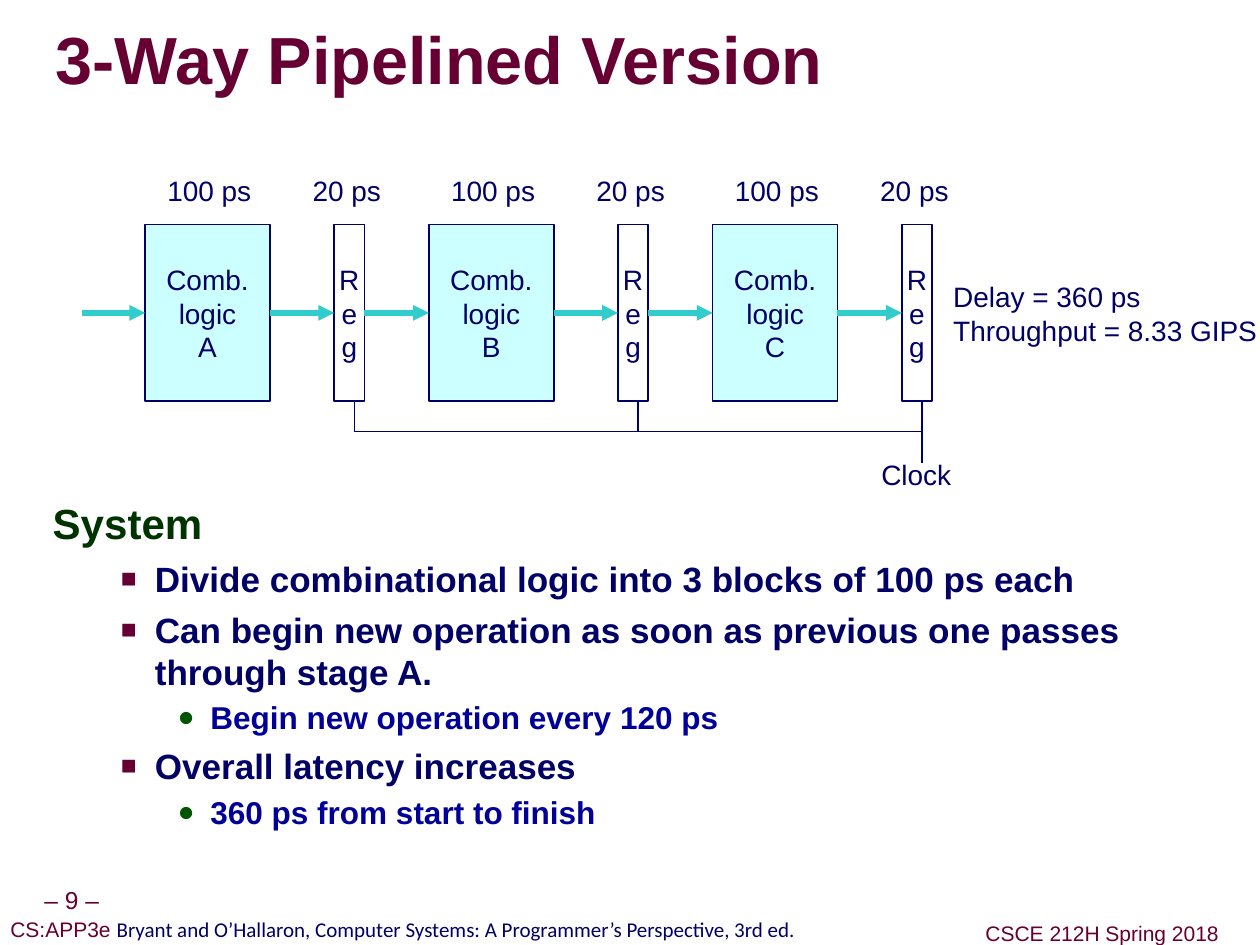
from lxml.etree import SubElement
from pptx import Presentation
from pptx.dml.color import RGBColor
from pptx.enum.shapes import MSO_CONNECTOR, MSO_SHAPE
from pptx.enum.text import MSO_ANCHOR, MSO_AUTO_SIZE, PP_ALIGN
from pptx.oxml.ns import qn
from pptx.util import Inches, Pt

NAVY, MAROON, TEAL = "000066", "660033", "33CCCC"
PALE, WHITE = "CCFFFF", "FFFFFF"
TOP, HEIGHT, LOGIC_WIDTH, REG_WIDTH = 1.78, 1.4, 0.99, 0.24
STAGE_PITCH, REG_OFFSET, CLOCK_Y = 2.25, 1.5, 3.42
FLOW_Y = TOP + HEIGHT / 2

BULLETS = {
    1: dict(mark="■", mark_color=MAROON, mark_size=75, margin=0.81, indent=-0.27,
            before=5, spacing=1.0, size=20, color=NAVY),
    2: dict(mark="●", mark_color="005400", mark_size=90, margin=1.25, indent=-0.26,
            before=1.8, spacing=1.07, size=18, color="000099"),
}
POINTS = [
    (1, "Divide combinational logic into 3 blocks of 100 ps each"),
    (1, "Can begin new operation as soon as previous one passes through stage A."),
    (2, "Begin new operation every 120 ps"),
    (1, "Overall latency increases"),
    (2, "360 ps from start to finish"),
]


def rgb(value):
    """Turn a hex string into a colour."""
    return RGBColor.from_string(value)


def add_span(para, text, size=16, color=NAVY, bold=False, font="Arial"):
    """Add formatted text to a paragraph."""
    span = para.add_run()
    span.text = text
    span.font.size = Pt(size)
    span.font.color.rgb = rgb(color)
    span.font.bold = bold
    span.font.name = font
    return span


class SlideBuilder:
    """Hold the style and the current page."""

    def __init__(self, deck):
        """Add a title-only page."""
        self.page = deck.slides.add_slide(deck.slide_layouts[5])

    def frame(self, shape, inset=(0.1, 0.05), wrap=False, anchor=MSO_ANCHOR.TOP):
        """Set the text frame of a shape."""
        frame = shape.text_frame
        frame.auto_size = MSO_AUTO_SIZE.NONE
        frame.word_wrap = wrap
        frame.vertical_anchor = anchor
        frame.margin_left = frame.margin_right = Inches(inset[0])
        frame.margin_top = frame.margin_bottom = Inches(inset[1])
        return frame

    def add_lines(self, frame, lines, align=PP_ALIGN.CENTER):
        """Add one paragraph per line."""
        for index, line in enumerate(lines):
            para = frame.add_paragraph() if index else frame.paragraphs[0]
            para.alignment = align
            add_span(para, line)

    def title(self, text):
        """Place the shadowed title."""
        title = self.page.shapes.title
        title.left, title.top = Inches(0.44), Inches(0.08)
        title.width, title.height = Inches(9.52), Inches(0.85)
        frame = self.frame(title, (0, 0), True, MSO_ANCHOR.MIDDLE)
        para = frame.paragraphs[0]
        para.alignment = PP_ALIGN.LEFT
        para.line_spacing = 0.87
        span = add_span(para, text, size=38, color=MAROON, bold=True)
        props = span._r.get_or_add_rPr()
        effects = SubElement(props, qn("a:effectLst"))
        shadow = SubElement(effects, qn("a:outerShdw"), dist="38100", dir="2700000")
        SubElement(shadow, qn("a:srgbClr"), val="999999")
        props.find(qn("a:solidFill")).addnext(effects)

    def text_box(self, left, top, width, height):
        """Add an empty text box."""
        return self.page.shapes.add_textbox(
            Inches(left), Inches(top), Inches(width), Inches(height))

    def label(self, lines, left, top, width, height=0.36, align=PP_ALIGN.CENTER):
        """Add a diagram label."""
        self.add_lines(self.frame(self.text_box(left, top, width, height)), lines, align)

    def footer(self, spans, left, top, width, height=0.28):
        """Add a footer line from formatted spans."""
        box = self.text_box(left, top, width, height)
        para = self.frame(box, (0.05, 0.05), anchor=MSO_ANCHOR.MIDDLE).paragraphs[0]
        para.alignment = PP_ALIGN.CENTER
        para.line_spacing = 0.9
        for text, style in spans:
            add_span(para, text, **style)

    def block(self, lines, left, width, fill):
        """Add an outlined pipeline block."""
        box = self.page.shapes.add_shape(
            MSO_SHAPE.RECTANGLE, Inches(left), Inches(TOP), Inches(width), Inches(HEIGHT))
        box.shadow.inherit = False
        box.fill.solid()
        box.fill.fore_color.rgb = rgb(fill)
        box.line.color.rgb = rgb(NAVY)
        box.line.width = Pt(1)
        self.add_lines(self.frame(box, anchor=MSO_ANCHOR.MIDDLE), lines)
        return box

    def line(self, start, end, color=NAVY, width=1):
        """Add a straight line."""
        line = self.page.shapes.add_connector(
            MSO_CONNECTOR.STRAIGHT, *(Inches(value) for value in (*start, *end)))
        line.line.color.rgb = rgb(color)
        line.line.width = Pt(width)
        SubElement(line._element.spPr, qn("a:effectLst"))
        return line

    def arrow(self, source, target):
        """Add a flow arrow into the left side of a block."""
        end_x = target.left.inches
        arrow = self.line((end_x - 0.5, FLOW_Y), (end_x, FLOW_Y), TEAL, 3)
        if source is not None:
            arrow.begin_connect(source, 3)
        arrow.end_connect(target, 1)
        outline = arrow._element.spPr.find(qn("a:ln"))
        SubElement(outline, qn("a:tailEnd"), type="triangle")

    def bullet(self, para, text, mark, mark_color, mark_size, margin, indent,
               before, spacing, **style):
        """Fill a paragraph with a bulleted line."""
        para.space_before = Pt(before)
        para.line_spacing = spacing
        props = para._p.get_or_add_pPr()
        props.set("marL", str(Inches(margin)))
        props.set("indent", str(Inches(indent)))
        SubElement(SubElement(props, qn("a:buClr")), qn("a:srgbClr"), val=mark_color)
        SubElement(props, qn("a:buSzPct"), val=str(mark_size * 1000))
        SubElement(props, qn("a:buFont"), typeface="Arial")
        SubElement(props, qn("a:buChar"), char=mark)
        add_span(para, text, bold=True, **style)

    def outline(self, heading, points):
        """Add the heading and its bullets."""
        frame = self.frame(self.text_box(0.32, 3.92, 9.07, 3.12), wrap=True)
        para = frame.paragraphs[0]
        para.line_spacing = 0.95
        add_span(para, heading, size=24, color="003300", bold=True)
        for level, text in points:
            para = frame.add_paragraph()
            para.level = level
            self.bullet(para, text, **BULLETS[level])

    def pipeline(self, stages):
        """Draw the stages, registers and clock lines."""
        previous = None
        clocks = []
        for index, stage in enumerate(stages):
            left = 1.15 + STAGE_PITCH * index
            logic = self.block(["Comb.", "logic", stage], left, LOGIC_WIDTH, PALE)
            register = self.block("Reg", left + REG_OFFSET, REG_WIDTH, WHITE)
            self.arrow(previous, logic)
            self.arrow(logic, register)
            self.label(["100 ps"], left + 0.08, 1.33, 0.86)
            self.label(["20 ps"], left + 1.23, 1.33, 0.74)
            clocks.append(left + 1.66)
            bottom = 3.67 if index == len(stages) - 1 else CLOCK_Y
            self.line((clocks[-1], TOP + HEIGHT), (clocks[-1], bottom))
            previous = register
        self.line((clocks[0], CLOCK_Y), (clocks[-1], CLOCK_Y))
        self.label(["Clock"], 6.89, 3.58, 0.75)


def main():
    """Build and save the deck."""
    deck = Presentation()
    deck.slide_width, deck.slide_height = Inches(9.99), Inches(7.49)
    builder = SlideBuilder(deck)
    small = dict(size=12, color=MAROON)
    builder.footer([("– 9 –", dict(size=14, color=MAROON))], 0.24, 6.99, 0.66, 0.31)
    builder.footer([
        ("CS:APP3e ", small),
        ("Bryant and O’Hallaron, Computer Systems: A Programmer’s Perspective, 3rd ed.",
         dict(size=12, font="Calibri")),
    ], 0, 7.24, 6.39)
    builder.footer([("CSCE 212H Spring 2018", small)], 7.76, 7.27, 1.96)
    builder.title("3-Way Pipelined Version")
    builder.outline("System", POINTS)
    builder.pipeline("ABC")
    builder.label(["Delay = 360 ps", "Throughput = 8.33 GIPS"],
                  7.46, 2.17, 2.73, 0.63, PP_ALIGN.LEFT)
    deck.save("out.pptx")


if __name__ == "__main__":
    main()
